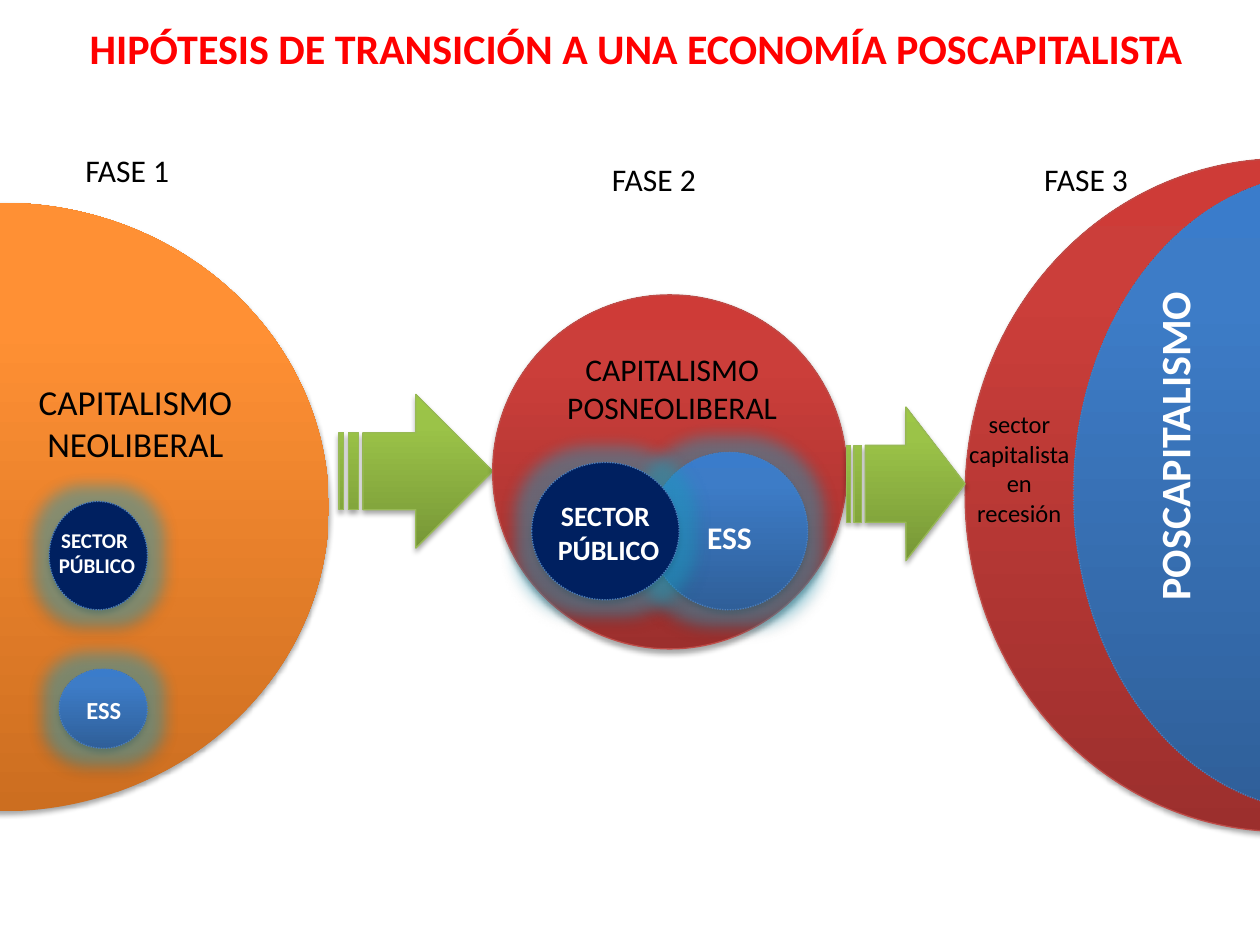
from dataclasses import dataclass

from lxml.etree import SubElement
from pptx import Presentation
from pptx.dml.color import RGBColor
from pptx.enum.dml import MSO_LINE
from pptx.enum.shapes import MSO_SHAPE as Shape
from pptx.enum.text import MSO_ANCHOR as Anchor, MSO_AUTO_SIZE as AutoSize, PP_ALIGN as Align
from pptx.oxml.ns import qn
from pptx.util import Inches, Pt

FONT = "Calibri"
COLUMNS, ROWS = 100, 75
WIDTH, HEIGHT = Inches(10), Inches(7.5)
COLORS = {
    "title": "FF0000", "dark": "000000", "light": "FFFFFF", "public": "002060",
    "glow": "1FB8DF", "red line": "BF4C48", "blue line": "4B7EBC", "green line": "98B955",
}
GRADIENTS = {
    "red": ("9C2F2D", "CB3E3A", "CE3B37"),
    "orange": ("CC6E20", "FF9034", "FF9136"),
    "blue": ("2F5F99", "3D7CC7", "3A7CCB"),
    "green": ("779737", "9BC348", "9DC746"),
}
STOPS = (0, 80, 100)


@dataclass
class Box:
    """A region in columns and rows of the slide grid."""
    left: float
    top: float
    width: float
    height: float

    def inner(self, left, top, width, height):
        return Box(self.left + left, self.top + top, width, height)

    def frame(self):
        column, row = WIDTH / COLUMNS, HEIGHT / ROWS
        return (round(self.left * column), round(self.top * row),
                round(self.width * column), round(self.height * row))


def rgb(name):
    return RGBColor.from_string(COLORS[name])


def add_color(parent, value, alpha=None):
    color = SubElement(parent, qn("a:srgbClr"), val=value)
    if alpha is not None:
        SubElement(color, qn("a:alpha"), val=str(alpha * 1000))


def fill_shape(shape, fill):
    if fill in COLORS:
        shape.fill.solid()
        shape.fill.fore_color.rgb = rgb(fill)
        return
    shape.fill.gradient()
    shape.fill.gradient_angle = 90
    stops = shape.element.spPr.find(".//" + qn("a:gsLst"))
    for stop in list(stops):
        stops.remove(stop)
    for position, value in zip(STOPS, GRADIENTS[fill]):
        add_color(SubElement(stops, qn("a:gs"), pos=str(position * 1000)), value)


def add_effects(shape, shadow, glow):
    shape.shadow.inherit = False
    effects = shape.element.spPr.find(qn("a:effectLst"))
    if glow:
        add_color(SubElement(effects, qn("a:glow"), rad=str(Pt(18))), COLORS["glow"], 40)
    if shadow:
        outer = SubElement(effects, qn("a:outerShdw"), blurRad=str(Pt(3.1)), dist=str(Pt(1.8)),
                           dir="5400000", rotWithShape="0")
        add_color(outer, COLORS["dark"], 35)


def add_figure(slide, box, fill, line=None, kind=Shape.OVAL, dotted=False, shadow=True, glow=False):
    shape = slide.shapes.add_shape(kind, *box.frame())
    fill_shape(shape, fill)
    if line:
        shape.line.color.rgb = rgb(line)
        shape.line.width = Pt(0.75)
        if dotted:
            shape.line.dash_style = MSO_LINE.ROUND_DOT
    else:
        shape.line.fill.background()
    add_effects(shape, shadow, glow)


def write_lines(frame, lines, size, color, bold):
    frame.word_wrap = True
    frame.vertical_anchor = Anchor.TOP
    for index, line in enumerate(lines):
        paragraph = frame.add_paragraph() if index else frame.paragraphs[0]
        paragraph.alignment = Align.CENTER
        run = paragraph.add_run()
        run.text = line
        run.font.name, run.font.size, run.font.bold = FONT, Pt(size), bold
        run.font.color.rgb = rgb(color)


def add_text(slide, box, lines, size, color="dark", bold=False, rotation=0):
    text_box = slide.shapes.add_textbox(*box.frame())
    text_box.rotation = rotation
    write_lines(text_box.text_frame, lines, size, color, bold)
    text_box.text_frame.auto_size = AutoSize.SHAPE_TO_FIT_TEXT


def add_sector(slide, circle, fill, text_area, lines, size):
    """A glowing circle with its white name."""
    add_figure(slide, circle, fill, "blue line", dotted=True, glow=True)
    add_text(slide, text_area, lines, size, "light", bold=True)


def add_title(slide, box):
    title = slide.shapes.title
    title.left, title.top, title.width, title.height = box.frame()
    write_lines(title.text_frame, ["HIPÓTESIS DE TRANSICIÓN A UNA ECONOMÍA POSCAPITALISTA"],
                24, "title", True)
    title.text_frame.auto_size = AutoSize.NONE


def add_neoliberal_phase(slide, box):
    add_figure(slide, box.inner(-25.8, 4.6, 51.9, 48.3), "orange")
    add_text(slide, box.inner(0.1, 0, 20, 4), ["FASE 1"], 18)
    add_text(slide, box.inner(-2.8, 18.2, 27.1, 7.7), ["CAPITALISMO", "NEOLIBERAL"], 20)
    add_sector(slide, box.inner(4.7, 41.6, 7, 6.3), "blue",
               box.inner(1.6, 43.2, 13.3, 3.4), ["ESS"], 14)
    add_sector(slide, box.inner(3.9, 28.3, 7.8, 8.6), "public",
               box.inner(-1.8, 29.9, 19, 5), ["SECTOR ", "PÚBLICO"], 12)


def add_posneoliberal_phase(slide, box):
    add_figure(slide, box.inner(0, 11.2, box.width, box.width), "red", "red line")
    add_text(slide, box.inner(2.8, 0, 20, 4), ["FASE 2"], 18)
    add_text(slide, box.inner(0.7, 15.1, 27.1, 7.1), ["CAPITALISMO", "POSNEOLIBERAL"], 18)
    add_sector(slide, box.inner(12.5, 23.7, 12.5, 12.5), "blue",
               box.inner(9.3, 28.4, 19, 4), ["ESS"], 18)
    add_sector(slide, box.inner(3.1, 24.5, 11.7, 10.9), "public",
               box.inner(-0.3, 26.9, 19, 6.4), ["SECTOR ", "PÚBLICO"], 16)


def add_postcapitalist_phase(slide, box):
    add_figure(slide, box.inner(0, 0.4, box.width, 53.4), "red", "red line")
    add_figure(slide, box.inner(8.6, 1.6, 39.9, 50.6), "blue", "blue line",
               dotted=True, shadow=False)
    add_text(slide, box.inner(-0.4, 0, 20, 4), ["FASE 3"], 18)
    add_text(slide, box.inner(2, 20.7, 29.1, 5), ["POSCAPITALISMO"], 24, "light", True, 270)
    add_text(slide, box.inner(-0.8, 19.8, 10.2, 10.4), ["sector capitalista en recesión"], 14)


def add_arrow(slide, box):
    add_figure(slide, box, "green", "green line", Shape.STRIPED_RIGHT_ARROW)


def main():
    presentation = Presentation()
    presentation.slide_width, presentation.slide_height = WIDTH, HEIGHT
    slide = presentation.slides.add_slide(presentation.slide_layouts.get_by_name("Title Only"))
    add_title(slide, Box(3.1, 1.3, 94.8, 5))
    add_postcapitalist_phase(slide, Box(76.6, 12.2, 50.5, 53.8))
    add_neoliberal_phase(slide, Box(0, 11.5, 26.1, 52.9))
    add_arrow(slide, Box(26.9, 31.3, 12.2, 12.2))
    add_posneoliberal_phase(slide, Box(39.1, 12.2, 28.1, 39.3))
    add_arrow(slide, Box(67.2, 32.3, 9.4, 12.2))
    presentation.save("out.pptx")


if __name__ == "__main__":
    main()
